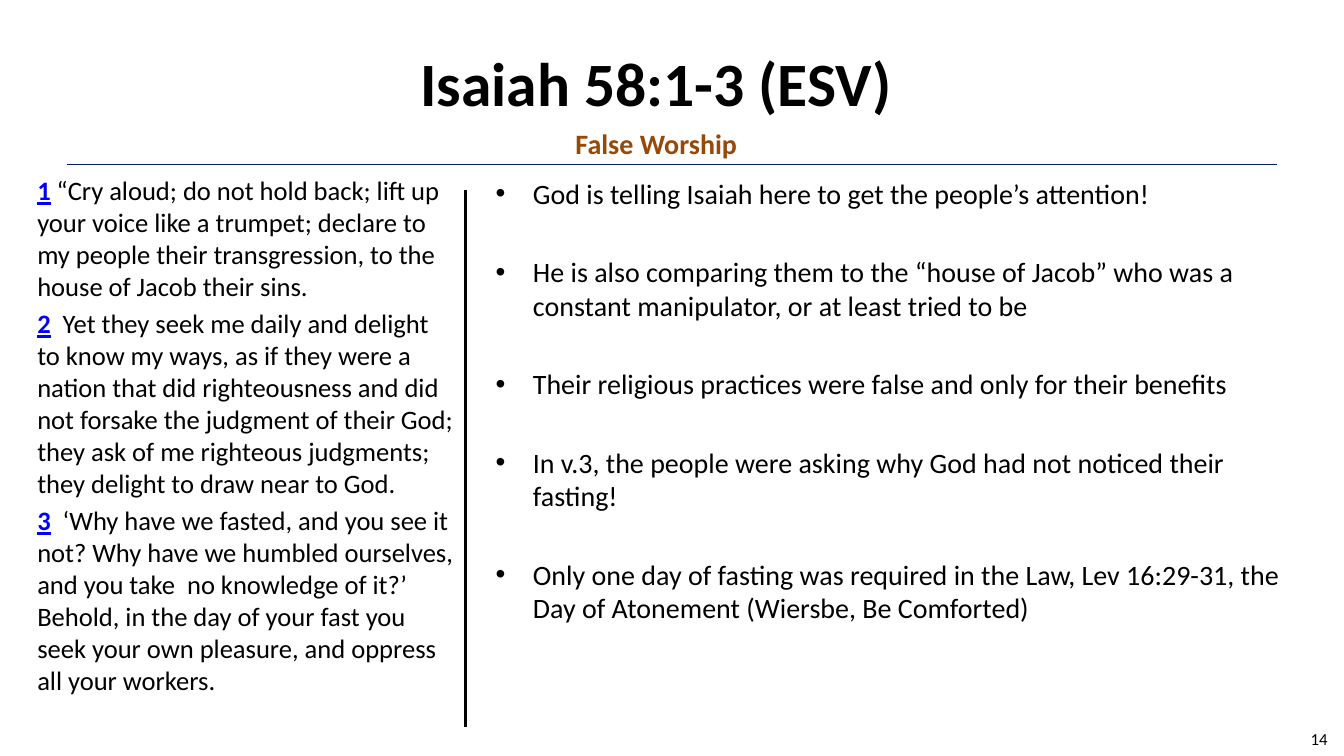
from lxml.etree import SubElement
from pptx import Presentation
from pptx.dml.color import RGBColor
from pptx.enum.shapes import MSO_CONNECTOR
from pptx.enum.text import MSO_ANCHOR, MSO_AUTO_SIZE, PP_ALIGN
from pptx.oxml.ns import qn
from pptx.util import Cm, Pt

TITLE = "Isaiah 58:1-3 (ESV)"
SUBTITLE = "False Worship"
PAGE_NUMBER = "14"
VERSES = [
    ("1", " ", "“Cry aloud; do not hold back; lift up your voice like a trumpet; declare to my people "
     "their transgression, to the house of Jacob their sins."),
    ("2", " ", " Yet they seek me daily and delight to know my ways, as if they were a nation that did "
     "righteousness and did not forsake the judgment of their God; they ask of me righteous judgments; "
     "they delight to draw near to God."),
    ("3", " ", " ‘Why have we fasted, and you see it not? Why have we humbled ourselves, and you take  no "
     "knowledge of it?’ Behold, in the day of your fast you seek your own pleasure, and oppress all "
     "your workers."),
]
NOTES = [
    "God is telling Isaiah here to get the people’s attention!",
    "He is also comparing them to the “house of Jacob” who was a constant manipulator, "
    "or at least tried to be",
    "Their religious practices were false and only for their benefits",
    "In v.3, the people were asking why God had not noticed their fasting!",
    "Only one day of fasting was required in the Law, Lev 16:29-31, the Day of Atonement "
    "(Wiersbe, Be Comforted)",
]

FONT = "Calibri"
BLACK = RGBColor(0x00, 0x00, 0x00)
BLUE = RGBColor(0x00, 0x00, 0xFF)
NAVY = RGBColor(0x00, 0x20, 0x60)
BROWN = RGBColor(0x98, 0x48, 0x07)
HANGING = Cm(0.94)


def style(paragraph, size, color=BLACK, bold=False, align=PP_ALIGN.LEFT):
    paragraph.alignment = align
    font = paragraph.font
    font.name, font.size, font.bold = FONT, Pt(size), bold
    font.color.rgb = color


def add_box(page, left, top, width, height, anchor=MSO_ANCHOR.TOP):
    box = page.shapes.add_textbox(Cm(left), Cm(top), Cm(width), Cm(height))
    frame = box.text_frame
    frame.word_wrap = True
    frame.auto_size = MSO_AUTO_SIZE.NONE
    frame.vertical_anchor = anchor
    return frame


def add_paragraph(frame, index, gap):
    if index == 0:
        return frame.paragraphs[0]
    paragraph = frame.add_paragraph()
    paragraph.space_before = Pt(gap)
    return paragraph


def add_bullet(paragraph):
    properties = paragraph._p.get_or_add_pPr()
    properties.set("marL", str(HANGING))
    properties.set("indent", str(-HANGING))
    SubElement(properties, qn("a:buFont"), typeface="Arial")
    SubElement(properties, qn("a:buChar"), char="•")


def add_rule(page, start, end, color, width):
    points = [Cm(value) for value in start + end]
    rule = page.shapes.add_connector(MSO_CONNECTOR.STRAIGHT, *points)
    rule.line.color.rgb = color
    rule.line.width = Pt(width)
    SubElement(rule._element.spPr, qn("a:effectLst"))


def add_title(page):
    title = page.shapes.title
    title.left, title.top, title.width, title.height = Cm(1.3), Cm(0.48), Cm(30.48), Cm(3.18)
    title.text_frame.text = TITLE
    title.text_frame.vertical_anchor = MSO_ANCHOR.MIDDLE
    style(title.text_frame.paragraphs[0], 44, bold=True, align=PP_ALIGN.CENTER)


def add_verses(page):
    frame = add_box(page, 0.69, 4.27, 11.05, 14.45)
    for index, (number, space, words) in enumerate(VERSES):
        paragraph = add_paragraph(frame, index, 3.8)
        style(paragraph, 19)
        span = paragraph.add_run()
        span.text = number
        span.font.bold = span.font.underline = True
        span.font.color.rgb = BLUE
        paragraph.add_run().text = space + words


def add_notes(page):
    frame = add_box(page, 12.24, 4.32, 20.96, 14.07)
    for index, words in enumerate(NOTES):
        paragraph = add_paragraph(frame, index, 32)
        add_bullet(paragraph)
        style(paragraph, 20)
        paragraph.add_run().text = words


def main():
    deck = Presentation()
    deck.slide_width, deck.slide_height = Cm(33.87), Cm(19.05)
    page = deck.slides.add_slide(deck.slide_layouts[5])
    add_title(page)
    add_verses(page)

    number = add_box(page, 31.17, 18.11, 2.54, 1.02, MSO_ANCHOR.MIDDLE)
    number.text = PAGE_NUMBER
    style(number.paragraphs[0], 12, align=PP_ALIGN.RIGHT)

    add_rule(page, (1.7, 4.15), (32.18, 4.15), NAVY, 0.75)
    subtitle = add_box(page, 11.51, 3.07, 10.06, 1.12)
    subtitle.text = SUBTITLE
    style(subtitle.paragraphs[0], 20, BROWN, True, PP_ALIGN.CENTER)

    add_notes(page)
    add_rule(page, (11.73, 4.8), (11.73, 18.31), BLACK, 1.5)
    deck.save("out.pptx")


if __name__ == "__main__":
    main()
